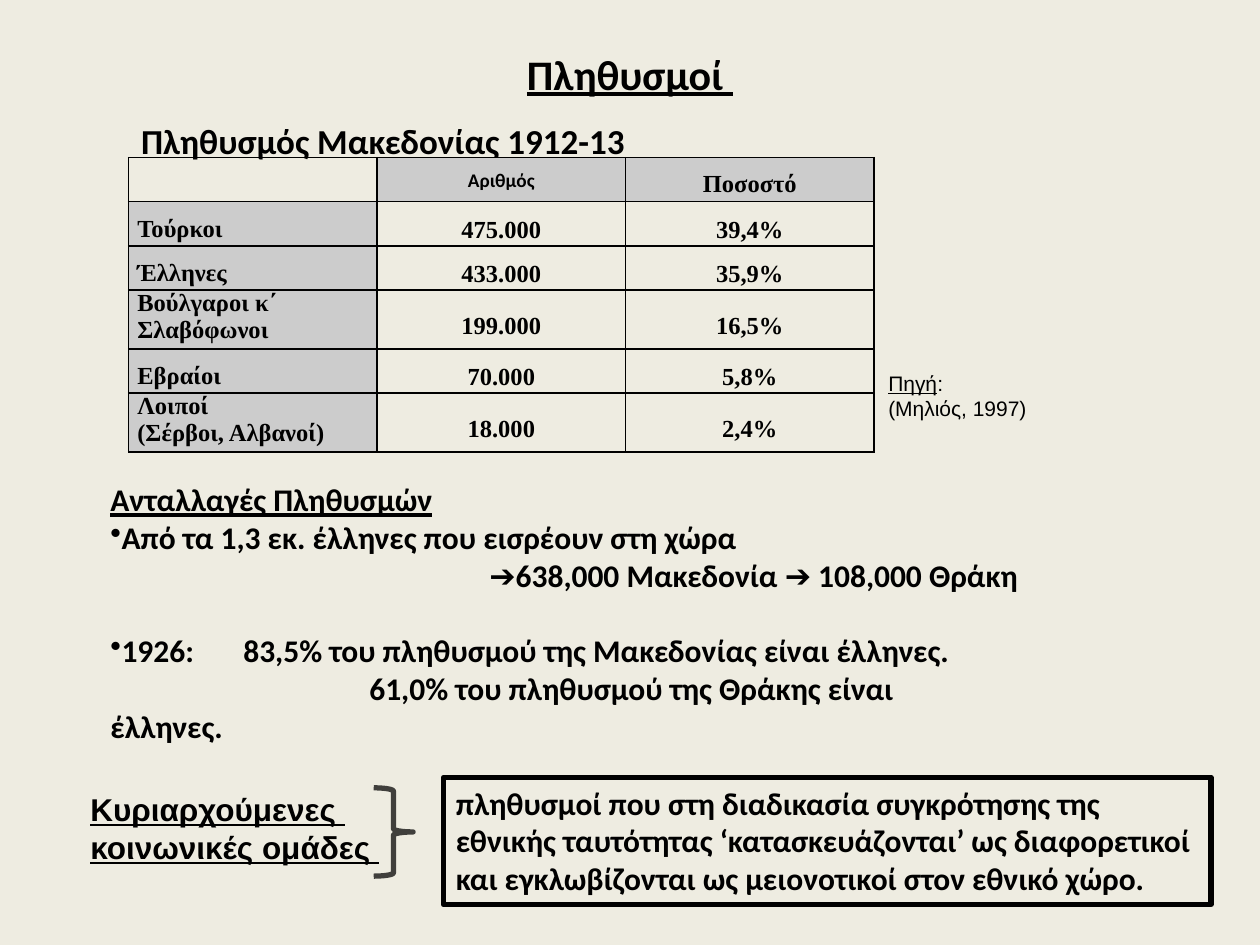
from lxml import etree
from pptx import Presentation
from pptx.dml.color import RGBColor
from pptx.enum.shapes import MSO_SHAPE
from pptx.enum.text import MSO_ANCHOR, MSO_AUTO_SIZE, PP_ALIGN
from pptx.oxml.ns import qn
from pptx.util import Pt

HUES = {"back": "EEECE1", "ink": "000000", "head": "CCCCCC"}
MID = MSO_ANCHOR.MIDDLE
CENTER, FULL = PP_ALIGN.CENTER, PP_ALIGN.JUSTIFY
BOLD = {"name": "Calibri", "size": Pt(18), "bold": True}
LINED = {"underline": True}
ROWS = [
    ("", "Αριθμός", "Ποσοστό"),
    ("Τούρκοι", "475.000", "39,4%"),
    ("Έλληνες", "433.000", "35,9%"),
    ("Βούλγαροι κ΄\nΣλαβόφωνοι ", "199.000", "16,5%"),
    ("Εβραίοι", "70.000", "5,8%"),
    ("Λοιποί \n(Σέρβοι, Αλβανοί)", "18.000", "2,4%"),
]


def hue(name):
    return RGBColor.from_string(HUES[name])


def apply(item, form):
    for key, value in form.items():
        setattr(item, key, value)


def add_run(para, text, form):
    run = para.add_run()
    run.text = text
    apply(run.font, form)
    run.font.color.rgb = hue("ink")


def add_line(frame, first, parts, form, look=None):
    """Write one paragraph made of (text, extra format) parts."""
    para = frame.paragraphs[0] if first else frame.add_paragraph()
    apply(para, look or {})
    for text, extra in parts:
        add_run(para, text, {**form, **extra})
    return para


def add_text(slide, box, lines, form, look=None, **frame_form):
    frame = slide.shapes.add_textbox(*map(Pt, box)).text_frame
    apply(frame, {"word_wrap": True, **frame_form})
    for i, parts in enumerate(lines):
        add_line(frame, i == 0, parts, form, look)
    return frame


def set_edge(cell):
    props = cell._tc.get_or_add_tcPr()
    for i, side in enumerate(("lnL", "lnR", "lnT", "lnB")):
        line = etree.Element(qn("a:" + side), w=str(Pt(1)))
        paint = etree.SubElement(line, qn("a:solidFill"))
        etree.SubElement(paint, qn("a:srgbClr"), val=HUES["ink"])
        props.insert(i, line)


def set_cell(cell, text, row, col):
    apply(cell, {"margin_left": Pt(5), "margin_right": Pt(5),
                 "margin_top": 0, "margin_bottom": 0})
    if row and col:
        cell.vertical_anchor = MID
    if text and (row == 0 or col == 0):
        cell.fill.solid()
        cell.fill.fore_color.rgb = hue("head")
    else:
        cell.fill.background()
    form = {"name": "Times New Roman", "size": Pt(14), "bold": True}
    if text == "Αριθμός":
        form.update(name="Calibri", size=Pt(11))
    lines = text.split("\n") if text else []
    look = {"alignment": CENTER if col else FULL}
    if len(lines) == 1:
        look["line_spacing"] = 1.5
    for i, line in enumerate(lines):
        add_line(cell.text_frame, i == 0, [(line, {})], form, look)
    set_edge(cell)


def add_grid(slide, box):
    left, top, width, height = box
    # Heading, table and source note
    add_text(slide, (left, top - 26, 298, 32),
             [[("Πληθυσμός Μακεδονίας 1912-13", {})]],
             {**BOLD, "size": Pt(20)}, {"alignment": FULL},
             vertical_anchor=MID)
    grid = slide.shapes.add_table(len(ROWS), 3, *map(Pt, box)).table
    apply(grid, {"first_row": False, "horz_banding": False})
    for col in grid.columns:
        col.width = Pt(width / 3)
    for r, texts in enumerate(ROWS):
        grid.rows[r].height = Pt(31 if "\n" in texts[0] else 23.25)
        for c, text in enumerate(texts):
            set_cell(grid.cell(r, c), text, r, c)
    add_text(slide, (left + width + 1, top + 118, 94, 36),
             [[("Πηγή", LINED), (":", {})], [("(Μηλιός, 1997)", {})]],
             {"name": "Arial", "size": Pt(12)}, word_wrap=False)


def add_facts(slide, box):
    frame = add_text(slide, box, [[("Ανταλλαγές Πληθυσμών", LINED)]], BOLD,
                     vertical_anchor=MID, margin_right=Pt(-14.4),
                     margin_bottom=0)
    # Text, first-line indent, bullet, space before
    facts = [
        ("Από τα 1,3 εκ. έλληνες που εισρέουν στη χώρα", 0, True, 0),
        ("➔638,000 Μακεδονία ➔ 108,000 Θράκη", 216.5, False, 0),
        ("1926:\t83,5% του πληθυσμού της Μακεδονίας είναι έλληνες.",
         0, True, 21.6),
        ("61,0% του πληθυσμού της Θράκης είναι", 148, False, 0),
    ]
    for text, indent, dot, gap in facts:
        para = add_line(frame, False, [(text, {})], BOLD,
                        {"space_before": Pt(gap)})
        props = para._p.get_or_add_pPr()
        props.set("marL", "0")
        props.set("indent", str(Pt(indent)))
        if dot:
            etree.SubElement(props, qn("a:buChar"), char="•")
        if "\t" in text:
            tabs = etree.SubElement(props, qn("a:tabLst"))
            etree.SubElement(tabs, qn("a:tab"), pos=str(Pt(76)), algn="l")
    # The last sentence runs on at the left edge
    para.add_line_break()
    add_run(para, "έλληνες.", BOLD)


def add_frame(slide, kind, box):
    shape = slide.shapes.add_shape(kind, *map(Pt, box))
    shape.shadow.inherit = False
    shape.fill.background()
    shape.line.color.rgb = hue("ink")
    shape.line.width = Pt(3)
    return shape


def add_groups(slide, box):
    left, top, width, height = box
    # Term
    add_text(slide, (left, top + 3.5, 197, 51),
             [[("Κυριαρχούμενες ", {})], [("κοινωνικές ομάδες ", {})]],
             {**BOLD, **LINED, "name": "Arial"}, vertical_anchor=MID)
    # Meaning
    note = add_frame(slide, MSO_SHAPE.RECTANGLE,
                     (left + 208.8, top, width - 208.8, height))
    apply(note.text_frame, {"word_wrap": True,
                            "vertical_anchor": MSO_ANCHOR.TOP,
                            "auto_size": MSO_AUTO_SIZE.SHAPE_TO_FIT_TEXT})
    add_line(note.text_frame, True, [(
        "πληθυσμοί που στη διαδικασία συγκρότησης της εθνικής ταυτότητας "
        "‘κατασκευάζονται’ ως διαφορετικοί και εγκλωβίζονται ως μειονοτικοί "
        "στον εθνικό χώρο.", {})], BOLD, {"alignment": PP_ALIGN.LEFT})
    # Brace
    brace = add_frame(slide, MSO_SHAPE.RIGHT_BRACE,
                      (left + 169, top + 6, 22.5, 50.5))
    tint = brace.line._ln.find(".//" + qn("a:srgbClr"))
    etree.SubElement(tint, qn("a:alpha"), val="73000")


def main():
    deck = Presentation()
    apply(deck, {"slide_width": Pt(720), "slide_height": Pt(540)})
    slide = deck.slides.add_slide(deck.slide_layouts[6])
    slide.background.fill.solid()
    slide.background.fill.fore_color.rgb = hue("back")
    add_text(slide, (36, 21.6, 648, 40.5), [[("Πληθυσμοί ", LINED)]],
             {**BOLD, "size": Pt(24)}, {"alignment": CENTER},
             vertical_anchor=MID)
    add_grid(slide, (73.5, 90, 426, 155))
    add_facts(slide, (56, 281, 512, 134.5))
    add_groups(slide, (44.6, 444.2, 647.4, 72.7))
    deck.save("out.pptx")


if __name__ == "__main__":
    main()
